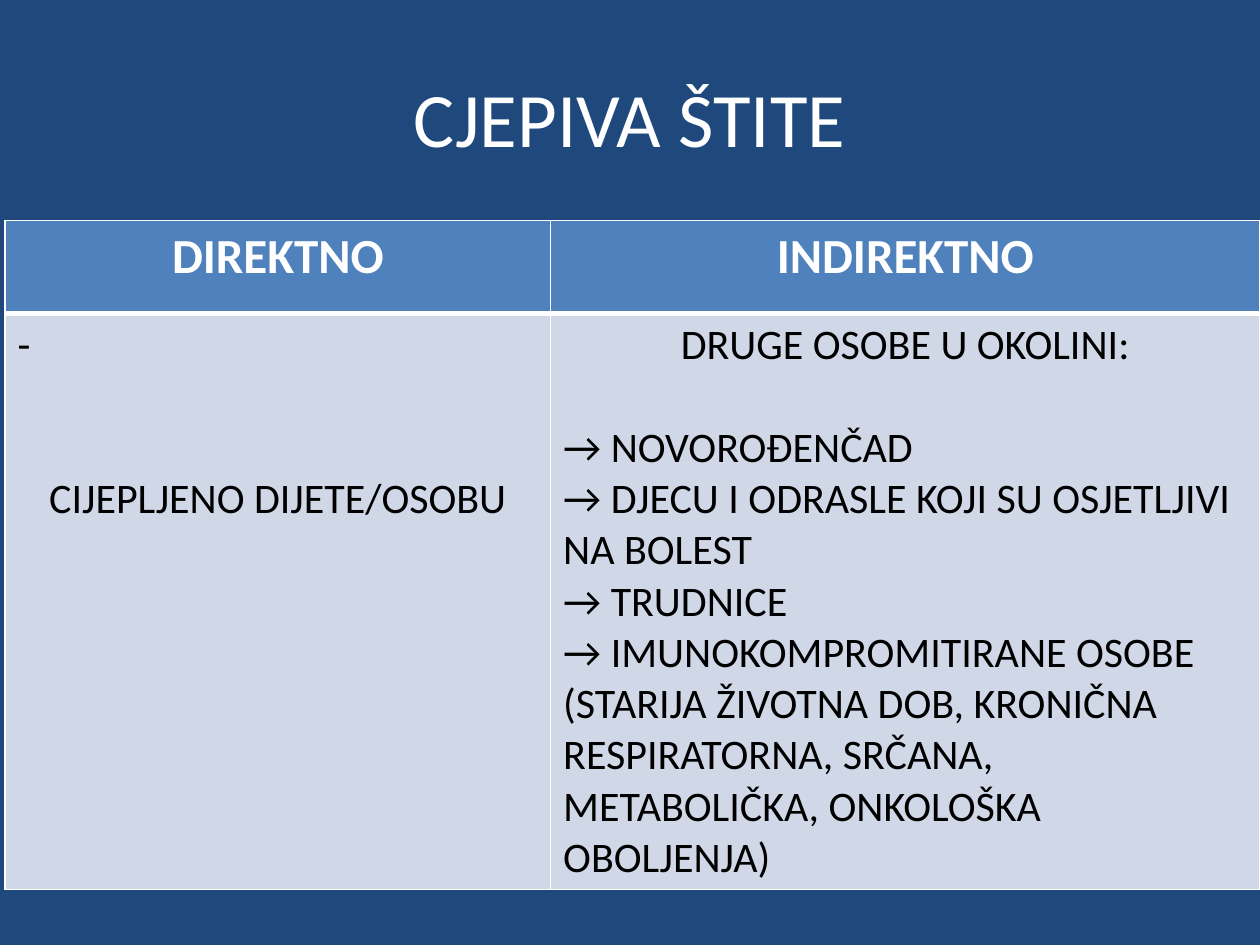
from dataclasses import dataclass

from lxml.etree import SubElement
from pptx import Presentation
from pptx.dml.color import RGBColor
from pptx.enum.text import MSO_ANCHOR, PP_ALIGN
from pptx.oxml.ns import qn
from pptx.util import Inches, Pt


@dataclass(frozen=True)
class Theme:
    font: str = "Calibri"
    back: str = "1F497D"
    head: str = "4F81BD"
    body: str = "D0D8E8"
    light: str = "FFFFFF"
    dark: str = "000000"
    title: int = 44
    label: int = 28
    text: int = 24
    line: float = 29.3  # height of one body line, in points


THEME = Theme()
WIDE, HIGH = 10, 7.5
COLS = (4.33, 5.63)
ROWS = (0.74, 4.57)
LEFT, MID = PP_ALIGN.LEFT, PP_ALIGN.CENTER

HEADS = ("DIREKTNO", "INDIREKTNO")
# Each paragraph: text, alignment, empty lines above it
BODY = (
    (("-", LEFT, 0), ("CIJEPLJENO DIJETE/OSOBU", MID, 2)),
    (
        ("DRUGE OSOBE U OKOLINI:", MID, 0),
        ("→ NOVOROĐENČAD", LEFT, 1),
        ("→ DJECU I ODRASLE KOJI SU OSJETLJIVI NA BOLEST", LEFT, 0),
        ("→ TRUDNICE", LEFT, 0),
        ("→ IMUNOKOMPROMITIRANE OSOBE", LEFT, 0),
        ("(STARIJA ŽIVOTNA DOB, KRONIČNA RESPIRATORNA, SRČANA, "
         "METABOLIČKA, ONKOLOŠKA OBOLJENJA)", LEFT, 0),
    ),
)


def write(frame, items, size, color, bold=False):
    for i, (text, align, gap) in enumerate(items):
        para = frame.paragraphs[0] if i == 0 else frame.add_paragraph()
        para.alignment = align
        para.space_before = Pt(gap * THEME.line)
        run = para.add_run()
        run.text = text
        style = {"name": THEME.font, "size": Pt(size), "bold": bold}
        for key, value in style.items():
            setattr(run.font, key, value)
        run.font.color.rgb = RGBColor.from_string(color)


def edge(cell, widths):
    """Draw cell borders; widths maps a side (L, R, T, B) to points."""
    props = cell._tc.get_or_add_tcPr()
    for side, width in widths.items():
        line = SubElement(props, qn(f"a:ln{side}"), w=str(Pt(width)))
        fill = SubElement(line, qn("a:solidFill"))
        SubElement(fill, qn("a:srgbClr"), val=THEME.light)


def paint(cell, color):
    cell.fill.solid()
    cell.fill.fore_color.rgb = RGBColor.from_string(color)


def add_title(slide, box):
    frame = slide.shapes.add_textbox(*map(Inches, box)).text_frame
    frame.word_wrap = True
    frame.vertical_anchor = MSO_ANCHOR.MIDDLE
    write(frame, [("CJEPIVA ŠTITE", MID, 0)], THEME.title, THEME.light)


def add_grid(slide, box):
    table = slide.shapes.add_table(
        len(ROWS), len(COLS), *map(Inches, box)).table
    table.horz_banding = False
    for col, width in zip(table.columns, COLS):
        col.width = Inches(width)
    for row, height in zip(table.rows, ROWS):
        row.height = Inches(height)
    for i, (head, items) in enumerate(zip(HEADS, BODY)):
        top, low = table.cell(0, i), table.cell(1, i)
        edge(top, {"L": 1, "R": 1, "T": 1, "B": 3})
        edge(low, {"L": 1, "R": 1, "T": 3, "B": 1})
        paint(top, THEME.head)
        paint(low, THEME.body)
        write(top.text_frame, [(head, MID, 0)],
              THEME.label, THEME.light, True)
        write(low.text_frame, items, THEME.text, THEME.dark)


def main():
    deck = Presentation()
    deck.slide_width, deck.slide_height = Inches(WIDE), Inches(HIGH)
    slide = deck.slides.add_slide(deck.slide_layouts[6])
    slide.background.fill.solid()
    slide.background.fill.fore_color.rgb = RGBColor.from_string(THEME.back)
    add_title(slide, (0.05 * WIDE, 0.04 * HIGH, 0.9 * WIDE, HIGH / 6))
    add_grid(slide, (WIDE - sum(COLS), 1.75, sum(COLS), sum(ROWS)))
    deck.save("out.pptx")


if __name__ == "__main__":
    main()
